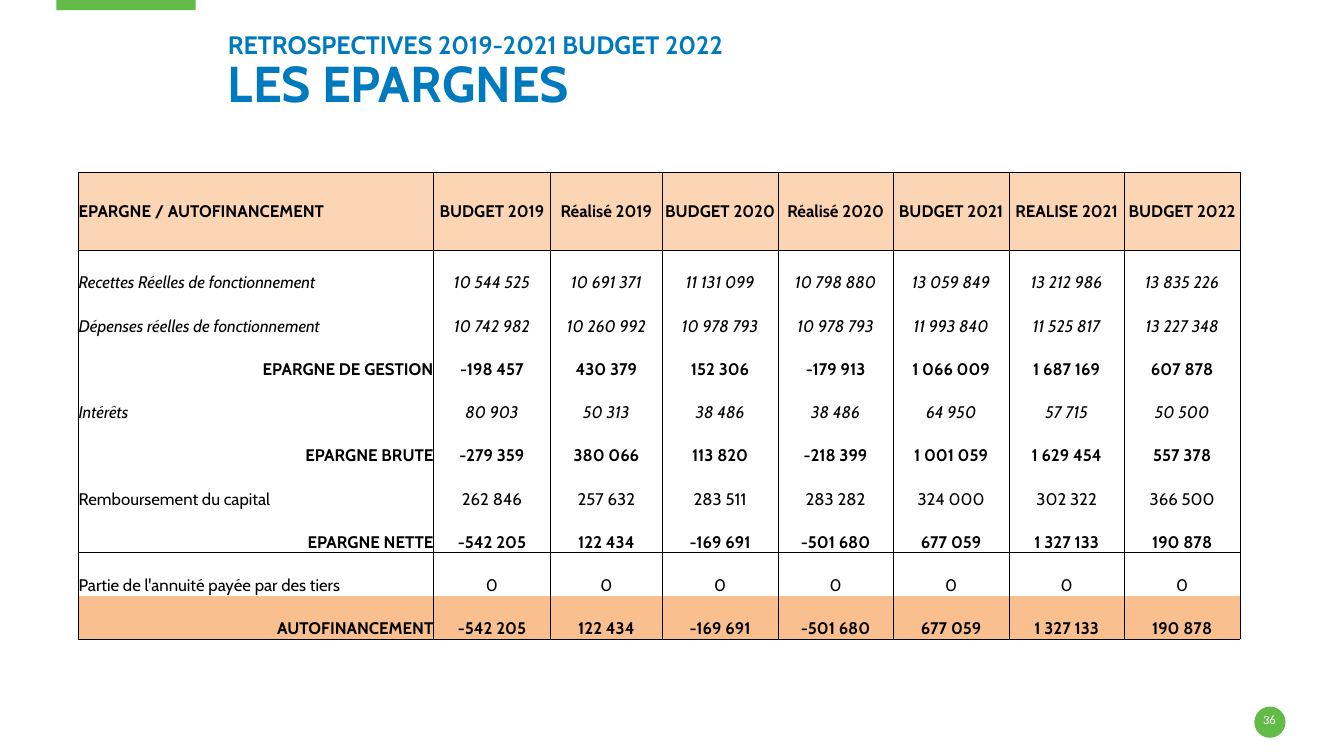
from dataclasses import dataclass

from lxml import etree
from pptx import Presentation
from pptx import util as u
from pptx.dml.color import RGBColor
from pptx.enum import shapes, text
from pptx.oxml.ns import qn

GREEN, BLUE, WHITE, BLACK = "62BB46", "007ABF", "FFFFFF", "000000"
HEADER_FILL, TOTAL_FILL = "FCD5B4", "FABF8F"
LEFT, CENTER, RIGHT = text.PP_ALIGN.LEFT, text.PP_ALIGN.CENTER, text.PP_ALIGN.RIGHT


@dataclass
class BudgetRow:
    label: str
    values: list[str]
    bold: bool = False
    italic: bool = False
    label_align: text.PP_ALIGN = LEFT
    anchor: text.MSO_ANCHOR = text.MSO_ANCHOR.BOTTOM
    fill: str | None = None
    rules: str = "LR"


def detail(label: str, values: str, italic: bool = False, rules: str = "LR") -> BudgetRow:
    return BudgetRow(label, values.split("|"), italic=italic, rules=rules)


def saving(label: str, values: str, fill: str | None = None, rules: str = "LR") -> BudgetRow:
    return BudgetRow(label, values.split("|"), bold=True, label_align=RIGHT,
                     fill=fill, rules=rules)


NET_SAVINGS = "-542 205|122 434|-169 691|-501 680|677 059|1 327 133|190 878"
BUDGET_ROWS = [
    BudgetRow("EPARGNE / AUTOFINANCEMENT",
              ["BUDGET 2019", "Réalisé 2019", "BUDGET 2020", "Réalisé 2020",
               "BUDGET 2021", "REALISE 2021", "BUDGET 2022"],
              bold=True, anchor=text.MSO_ANCHOR.MIDDLE, fill=HEADER_FILL, rules="LRTB"),
    detail("Recettes Réelles de fonctionnement",
           "10 544 525|10 691 371|11 131 099|10 798 880|13 059 849|13 212 986|13 835 226",
           italic=True, rules="LRT"),
    detail("Dépenses réelles de fonctionnement",
           "10 742 982|10 260 992|10 978 793|10 978 793|11 993 840|11 525 817|13 227 348",
           italic=True),
    saving("EPARGNE DE GESTION",
           "-198 457|430 379|152 306|-179 913|1 066 009|1 687 169|607 878"),
    detail("Intérêts", "80 903|50 313|38 486|38 486|64 950|57 715|50 500", italic=True),
    saving("EPARGNE BRUTE",
           "-279 359|380 066|113 820|-218 399|1 001 059|1 629 454|557 378"),
    detail("Remboursement du capital",
           "262 846|257 632|283 511|283 282|324 000|302 322|366 500"),
    saving("EPARGNE NETTE", NET_SAVINGS, rules="LRB"),
    detail("Partie de l'annuité payée par des tiers", "0|0|0|0|0|0|0", rules="LRT"),
    saving("AUTOFINANCEMENT", NET_SAVINGS, fill=TOTAL_FILL, rules="LRB"),
]


def color(hex_code: str) -> RGBColor:
    return RGBColor.from_string(hex_code)


def box(left: float, top: float, width: float, height: float) -> list[int]:
    return [u.Inches(length) for length in (left, top, width, height)]


def set_font(font, size: float, name: str, hex_code: str,
             bold: bool = False, italic: bool = False) -> None:
    font.size, font.name = u.Pt(size), name
    font.bold, font.italic = bold, italic
    font.color.rgb = color(hex_code)


def clear_margins(holder) -> None:
    holder.margin_left = holder.margin_right = holder.margin_top = holder.margin_bottom = 0


def add_green_shape(slide, kind: shapes.MSO_SHAPE, bounds: list[int]) -> None:
    shape = slide.shapes.add_shape(kind, *bounds)
    shape.shadow.inherit = False
    shape.fill.solid()
    shape.fill.fore_color.rgb = color(GREEN)
    shape.line.fill.background()


def set_borders(cell, rules: str) -> None:
    properties = cell._tc.get_or_add_tcPr()
    for side in "LRTB":
        line = etree.SubElement(properties, qn(f"a:ln{side}"), w=str(u.Pt(0.5)))
        if side in rules:
            fill = etree.SubElement(line, qn("a:solidFill"))
            etree.SubElement(fill, qn("a:srgbClr"), val=BLACK)
        else:
            etree.SubElement(line, qn("a:noFill"))


def fill_cell(cell, content: str, row: BudgetRow, align: text.PP_ALIGN) -> None:
    set_borders(cell, row.rules)
    if row.fill:
        cell.fill.solid()
        cell.fill.fore_color.rgb = color(row.fill)
    else:
        cell.fill.background()
    clear_margins(cell)
    cell.vertical_anchor = row.anchor
    cell.text = content
    paragraph = cell.text_frame.paragraphs[0]
    paragraph.alignment = align
    set_font(paragraph.font, 12, "Cabin", BLACK, row.bold, row.italic)


def add_title(slide) -> None:
    title = slide.shapes.title
    title.left, title.top, title.width, title.height = box(2.26, 0.24, 10.88, 0.89)
    frame = title.text_frame
    clear_margins(frame)
    frame.word_wrap = True
    frame.auto_size = text.MSO_AUTO_SIZE.NONE
    frame.vertical_anchor = text.MSO_ANCHOR.BOTTOM
    paragraph = frame.paragraphs[0]
    paragraph.alignment, paragraph.line_spacing = LEFT, 0.9
    for content, size in (("RETROSPECTIVES 2019-2021 BUDGET 2022", 18), ("LES EPARGNES", 36)):
        if paragraph.runs:
            paragraph.add_line_break()
            line_break = paragraph._p.find(qn("a:br"))
            etree.SubElement(line_break, qn("a:rPr"), sz="1800")
        run = paragraph.add_run()
        run.text = content
        set_font(run.font, size, "Cabin", BLUE, bold=True)


def add_page_number(slide) -> None:
    add_green_shape(slide, shapes.MSO_SHAPE.OVAL, box(12.44, 7.01, 0.31, 0.31))
    frame = slide.shapes.add_textbox(*box(12.43, 7.06, 0.32, 0.2)).text_frame
    clear_margins(frame)
    frame.word_wrap = True
    frame.text = "36"
    frame.paragraphs[0].alignment = CENTER
    set_font(frame.paragraphs[0].font, 9, "Calibri", WHITE)


def add_budget_table(slide) -> None:
    width, height, header_height = 11.52, 4.63, 0.77
    first_widths = [3.52, 1.16, 1.11]
    widths = first_widths + [(width - sum(first_widths)) / 5] * 5
    body_height = (height - header_height) / (len(BUDGET_ROWS) - 1)
    table = slide.shapes.add_table(len(BUDGET_ROWS), len(widths),
                                   *box(0.78, 1.71, width, height)).table
    table.first_row = table.horz_banding = False
    for column, column_width in zip(table.columns, widths):
        column.width = u.Inches(column_width)
    for index, row in enumerate(BUDGET_ROWS):
        table.rows[index].height = u.Inches(body_height if index else header_height)
        fill_cell(table.cell(index, 0), row.label, row, row.label_align)
        for column_index, value in enumerate(row.values, start=1):
            fill_cell(table.cell(index, column_index), value, row, CENTER)


def main() -> None:
    deck = Presentation()
    deck.slide_width, deck.slide_height = u.Inches(13.33), u.Inches(7.5)
    slide = deck.slides.add_slide(deck.slide_layouts[5])

    # Top accent and heading
    add_green_shape(slide, shapes.MSO_SHAPE.RECTANGLE, box(0.56, -0.02, 1.38, 0.12))
    add_title(slide)

    # Savings by year
    add_budget_table(slide)

    # Page number badge
    add_page_number(slide)
    deck.save("out.pptx")


if __name__ == "__main__":
    main()
